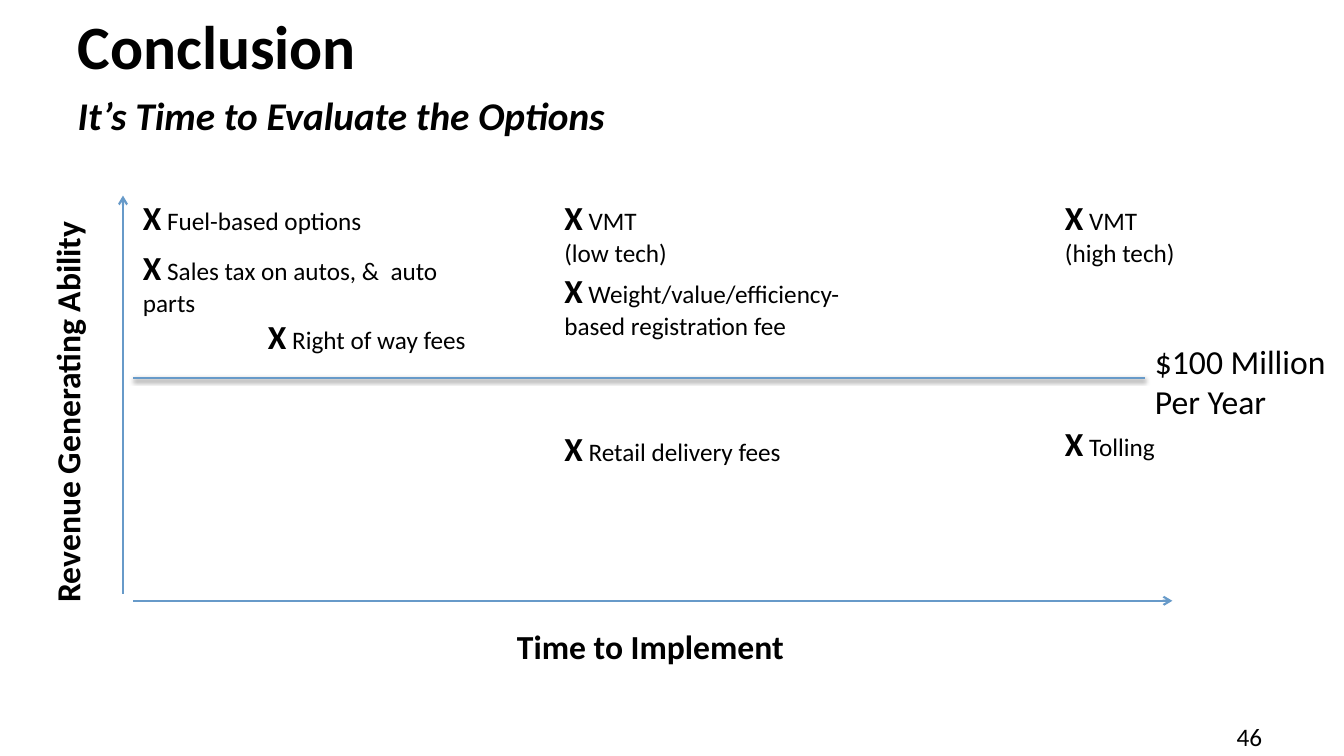
from lxml import etree
from pptx import Presentation
from pptx import util as u
from pptx.dml.color import RGBColor
from pptx.enum import shapes, text
from pptx.oxml.ns import qn

WIDE, HIGH = u.Inches(13.33), u.Inches(7.5)
INK = {"text": "000000", "axis": "679AC9", "shade": "000000"}
HEAD = {"size": u.Pt(44), "bold": True}
SUB = {"size": u.Pt(28), "bold": True, "italic": True}
LABEL = {"size": u.Pt(24), "bold": True}
LIMIT = {"size": u.Pt(24), "bold": False}
NOTE = {"size": u.Pt(18), "bold": False}

# Columns and rows, in percent of the slide
EARLY, MID, LATE = 9.9, 41.25, 78.5
TOP, BASE, HALF = 25.4, 79.47, 50
ONE, TWO = 6.67, 10.8

# Options: left, top, width, height, lines after the X
OPTIONS = [
    (EARLY, TOP, 19.28, ONE, ["Fuel-based options"]),
    (EARLY, 32, 26.93, TWO, ["Sales tax on autos, &  auto parts"]),
    (19.2, 41.07, 17.7, ONE, ["Right of way fees"]),
    (MID, TOP, 18.38, TWO, ["VMT", "(low tech)"]),
    (MID, 35.07, 25.43, TWO,
     ["Weight/value/efficiency-based registration fee"]),
    (MID, 56, 17.7, ONE, ["Retail delivery fees"]),
    (LATE, TOP, 18.38, TWO, ["VMT", "(high tech)"]),
    (LATE, 55.33, 16.58, ONE, ["Tolling"]),
]


def across(share):
    return round(WIDE * share / 100)


def down(share):
    return round(HIGH * share / 100)


def add_run(para, words, style):
    run = para.add_run()
    run.text = words
    run.font.name = "Calibri"
    run.font.color.rgb = RGBColor.from_string(INK["text"])
    for key, value in style.items():
        setattr(run.font, key, value)


def add_box(slide, left, top, width, height, lines, turn=0):
    """Each line is a list of (words, style) runs."""
    box = slide.shapes.add_textbox(
        across(left), down(top), across(width), down(height))
    box.rotation = turn
    frame = box.text_frame
    frame.word_wrap = True
    for i, line in enumerate(lines):
        para = frame.add_paragraph() if i else frame.paragraphs[0]
        for words, style in line:
            add_run(para, words, style)


def add_option(slide, left, top, width, height, lines):
    first, *rest = lines
    rows = [[("X", LABEL), (" " + first, NOTE)]]
    rows += [[(line, NOTE)] for line in rest]
    add_box(slide, left, top, width, height, rows)


def add_line(slide, x1, y1, x2, y2, weight=1.5, arrow=False, shade=False):
    line = slide.shapes.add_connector(
        shapes.MSO_CONNECTOR.STRAIGHT,
        across(x1), down(y1), across(x2), down(y2))
    line.line.color.rgb = RGBColor.from_string(INK["axis"])
    line.line.width = u.Pt(weight)
    props = line._element.spPr
    if arrow:
        etree.SubElement(props.find(qn("a:ln")), qn("a:tailEnd"), type="arrow")
    effects = etree.SubElement(props, qn("a:effectLst"))
    if shade:
        outer = etree.SubElement(
            effects, qn("a:outerShdw"), blurRad=str(u.Pt(3.1)),
            dist=str(u.Pt(1.6)), dir="5400000", rotWithShape="0")
        tint = etree.SubElement(outer, qn("a:srgbClr"), val=INK["shade"])
        etree.SubElement(tint, qn("a:alpha"), val="38000")


def set_title(slide):
    title = slide.shapes.title
    spot = {"left": across(5.03), "top": down(2.53),
            "width": across(90), "height": down(16.67)}
    for key, value in spot.items():
        setattr(title, key, value)
    frame = title.text_frame
    frame.word_wrap = True
    frame.vertical_anchor = text.MSO_ANCHOR.MIDDLE
    para = frame.paragraphs[0]
    para.alignment = text.PP_ALIGN.LEFT
    para.line_spacing = u.Pt(40)
    add_run(para, "Conclusion", HEAD)
    para.add_line_break()
    add_run(para, "It’s Time to Evaluate the Options", SUB)


def main():
    deck = Presentation()
    deck.slide_width, deck.slide_height = WIDE, HIGH
    slide = deck.slides.add_slide(deck.slide_layouts[5])
    set_title(slide)

    # Axes and their labels
    add_line(slide, EARLY, BASE, 87.23, BASE, arrow=True)
    add_line(slide, 9.15, 78.53, 9.15, 25.87, arrow=True)
    add_box(slide, -11.4, 44.4, 35.1, TWO,
            [[("Revenue Generating Ability", LABEL)]], turn=270)
    add_box(slide, 37.73, 82.13, 35.1, TWO, [[("Time to Implement", LABEL)]])

    # Revenue threshold
    add_line(slide, EARLY, HALF, 85.2, HALF, weight=2, shade=True)
    add_box(slide, 85.2, 44.4, 23.18, 12.13,
            [[("$100 Million", LIMIT)], [("Per Year", LIMIT)]])

    # Options on the chart
    for option in OPTIONS:
        add_option(slide, *option)

    # Page number
    add_box(slide, 91.28, 94.8, 7.5, 9.47, [[("46", NOTE)]])
    deck.save("out.pptx")


if __name__ == "__main__":
    main()
